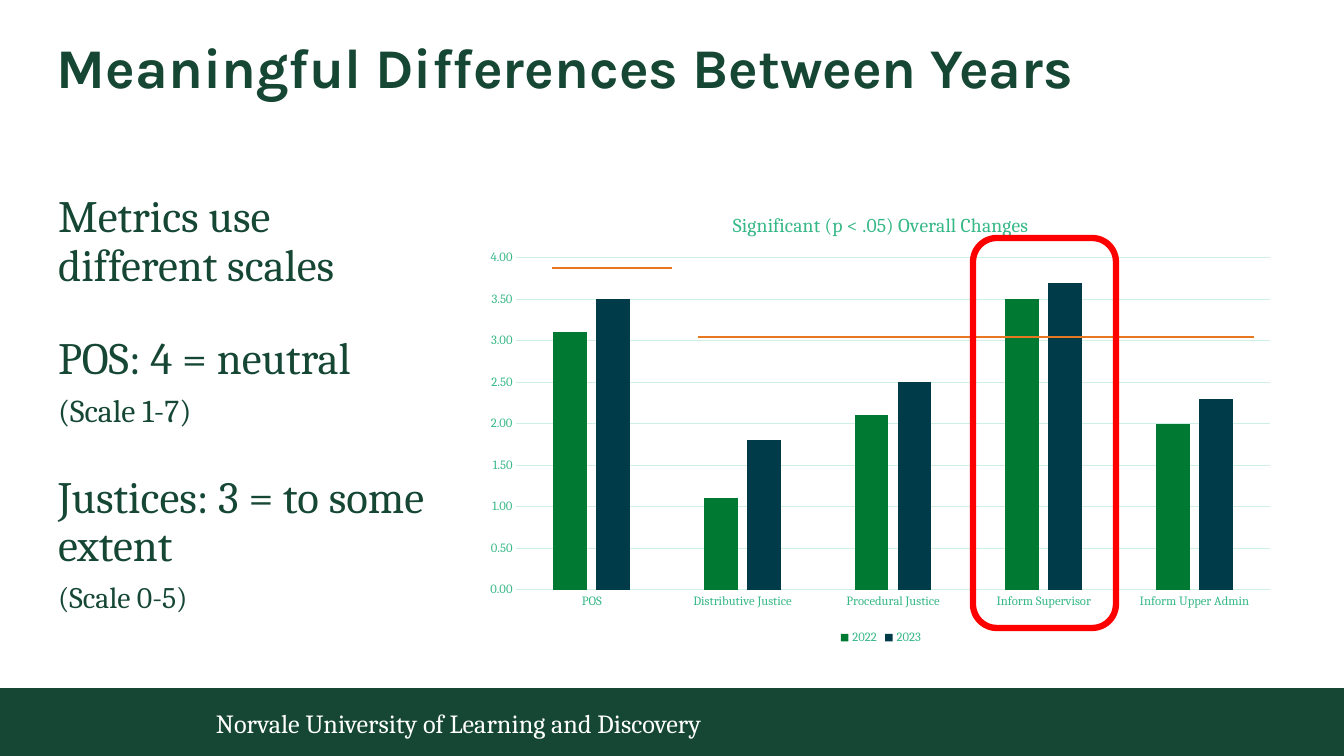
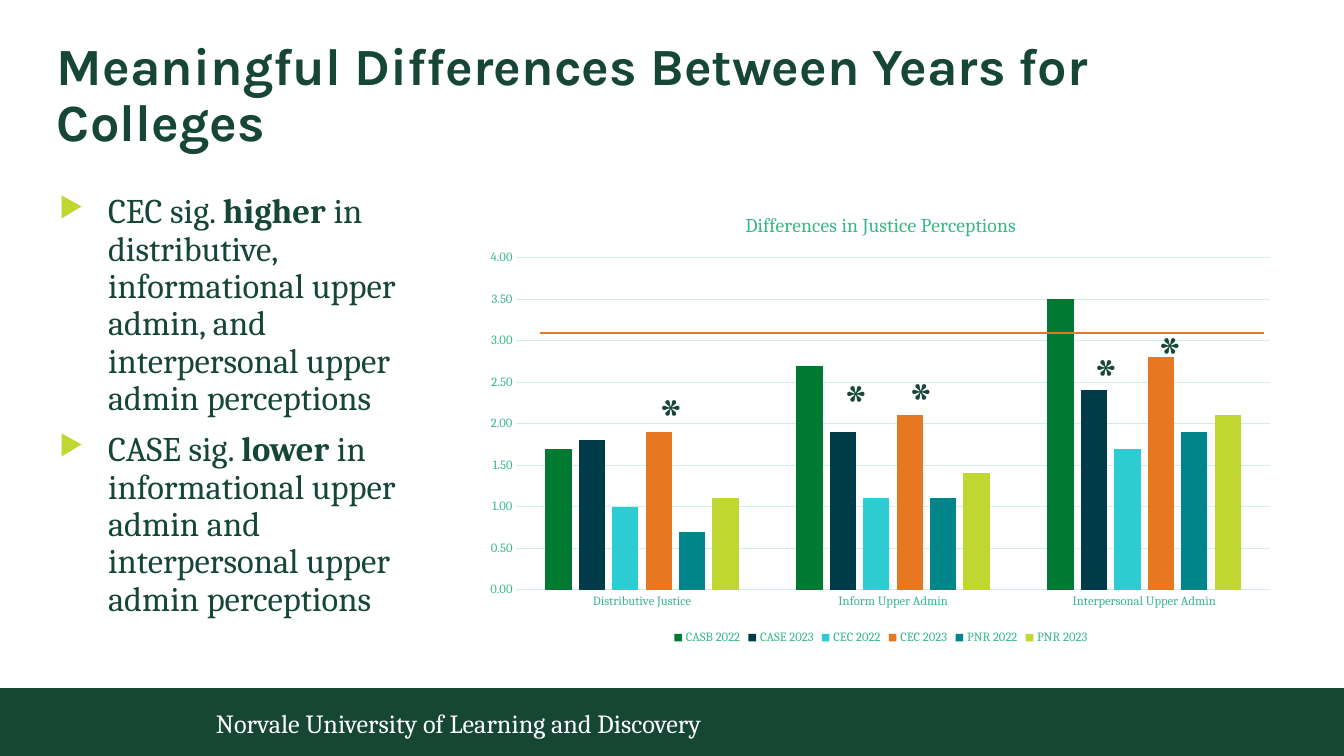
from dataclasses import dataclass

from lxml.etree import SubElement
from pptx import Presentation
from pptx.chart.data import CategoryChartData
from pptx.dml.color import RGBColor
from pptx.enum.chart import XL_CHART_TYPE as CT, XL_LEGEND_POSITION as LP, XL_TICK_MARK as TM
from pptx.enum.shapes import MSO_CONNECTOR as MC, MSO_SHAPE as MS
from pptx.enum.text import MSO_ANCHOR as MA, MSO_AUTO_SIZE as AS, PP_ALIGN as PA
from pptx.oxml.ns import qn
from pptx.util import Emu, Pt

SCALE = 914400 / 100.8
FOOTER = "Norvale University of Learning and Discovery"


@dataclass(frozen=True)
class Theme:
    """Colours, fonts and type sizes of the deck."""
    dark: str = "154734"
    white: str = "FFFFFF"
    mint: str = "36B887"
    grid: str = "CFF1E4"
    orange: str = "E87722"
    red: str = "FF0000"
    lime: str = "BFD730"
    series: tuple = ("007A33", "003B49", "2DCCD3", "E87722", "00858A", "BFD730")
    head: str = "Karla"
    body: str = "Cambria"
    title: float = 40
    long_title: float = 37.3
    lead: float = 32
    note: float = 22.7
    small_note: float = 21.3
    bullet: float = 24.7
    star: float = 42.7
    footer: float = 18.7
    chart_title: float = 14
    chart: float = 10
    axis: float = 9


T = Theme()


def px(*lengths):
    """Turn px into EMU."""
    return [Emu(round(n * SCALE)) for n in lengths]


def rgb(color):
    """Turn a hex string into a colour."""
    return RGBColor.from_string(color)


def style(font, size, color, name=T.body, bold=None):
    """Set the look of a font."""
    font.size, font.name, font.bold = Pt(size), name, bold
    font.color.rgb = rgb(color)


def write(tf, text, size=T.lead, color=T.dark, font=T.body, bold=False,
          align=None, spacing=None, before=0, after=0, bullet=None):
    """Add a paragraph, with the parts between ** in bold."""
    p = tf.paragraphs[0]
    if p.runs:
        p = tf.add_paragraph()
    p.alignment, p.line_spacing = align, spacing
    p.space_before, p.space_after = Pt(before), Pt(after)
    for i, part in enumerate(text.split("**")):
        r = p.add_run()
        r.text = part
        style(r.font, size, color, font, bold or i % 2 == 1)
    if bullet:
        pPr = p._p.get_or_add_pPr()
        indent, hang = px(50, -49)
        pPr.set("marL", str(indent))
        pPr.set("indent", str(hang))
        SubElement(SubElement(pPr, qn("a:buClr")), qn("a:srgbClr"), val=T.lime)
        SubElement(pPr, qn("a:buSzPct"), val="80000")
        SubElement(pPr, qn("a:buChar"), char=bullet)


class Deck:
    """Hold the presentation and the current slide."""

    def __init__(self):
        """Start an empty wide presentation."""
        self.prs = Presentation()
        self.prs.slide_width, self.prs.slide_height = px(1344, 756)

    def slide(self, title, size=T.title):
        """Add a slide with its band, footer and title."""
        self.s = self.prs.slides.add_slide(self.prs.slide_layouts[6])
        self.shape(MS.RECTANGLE, 0, 688, 1344, 68, fill=T.dark)
        tf = self.box(206, 697, 854, 53)
        tf.vertical_anchor = MA.MIDDLE
        write(tf, FOOTER, size=T.footer, color=T.white)
        tf = self.box(57, 40, 1229, 58, inset=False)
        write(tf, title, size=size, font=T.head, bold=True, spacing=0.9)

    def box(self, x, y, w, h, inset=True):
        """Add a wrapping text box and return its frame."""
        tf = self.s.shapes.add_textbox(*px(x, y, w, h)).text_frame
        tf.word_wrap = True
        if not inset:
            tf.margin_left = tf.margin_right = tf.margin_top = tf.margin_bottom = 0
        return tf

    def body(self):
        """Add the left text column."""
        return self.box(58, 194, 378, 455, inset=False)

    def star(self, x, y):
        """Mark a significant bar."""
        tf = self.box(x, y, 27, 82)
        tf.auto_size = AS.SHAPE_TO_FIT_TEXT
        write(tf, "*", size=T.star, align=PA.CENTER)

    def shape(self, kind, x, y, w, h, fill=None, line=None, width=4.5):
        """Add a preset shape."""
        sp = self.s.shapes.add_shape(kind, *px(x, y, w, h))
        sp.shadow.inherit = False
        if fill:
            sp.fill.solid()
            sp.fill.fore_color.rgb = rgb(fill)
        else:
            sp.fill.background()
        if line:
            sp.line.color.rgb, sp.line.width = rgb(line), Pt(width)
        else:
            sp.line.fill.background()

    def neutral_line(self, x1, x2, y):
        """Draw the neutral level of a scale."""
        ln = self.s.shapes.add_connector(MC.STRAIGHT, *px(x1, y, x2, y))
        ln.line.color.rgb, ln.line.width = rgb(T.orange), Pt(1.5)
        SubElement(ln._element.spPr, qn("a:effectLst"))

    def chart(self, title, cats, series):
        """Add the column chart."""
        data = CategoryChartData(number_format="0.0")
        data.categories = cats
        for name, vals in series.items():
            data.add_series(name, vals)
        ch = self.s.shapes.add_chart(CT.COLUMN_CLUSTERED, *px(476, 194, 810, 455), data).chart
        style(ch.font, T.chart, T.dark)
        write(ch.chart_title.text_frame, title, size=T.chart_title, color=T.mint)
        ch.has_legend = True
        ch.legend.position, ch.legend.include_in_layout = LP.BOTTOM, False
        style(ch.legend.font, T.axis, T.mint)
        plot = ch.plots[0]
        plot.gap_width, plot.overlap, plot.vary_by_categories = 219, -27, False
        for ser, color in zip(plot.series, T.series):
            ser.format.fill.solid()
            ser.format.fill.fore_color.rgb = rgb(color)
            ser.invert_if_negative = False
        self.axes(ch)
        self.plot_area(ch, x=0.05, y=0.14, w=0.93, h=0.73)

    def axes(self, ch):
        """Format both axes."""
        cat, val = ch.category_axis, ch.value_axis
        for ax in (cat, val):
            ax.major_tick_mark = ax.minor_tick_mark = TM.NONE
            style(ax.tick_labels.font, T.axis, T.mint)
        val.minimum_scale, val.maximum_scale, val.major_unit = 0, 4, 0.5
        val.tick_labels.number_format = "#,##0.00"
        val.tick_labels.number_format_is_linked = False
        val.format.line.fill.background()
        for line in (cat.format.line, val.major_gridlines.format.line):
            line.color.rgb, line.width = rgb(T.grid), Pt(0.75)

    def plot_area(self, ch, **place):
        """Fix the inner plot area as shares of the chart."""
        area = ch._chartSpace.chart.plotArea
        for old in area.findall(qn("c:layout")):
            area.remove(old)
        layout = area.makeelement(qn("c:layout"))
        area.insert(0, layout)
        manual = SubElement(layout, qn("c:manualLayout"))
        SubElement(manual, qn("c:layoutTarget"), val="inner")
        for key in "xy":
            SubElement(manual, qn(f"c:{key}Mode"), val="edge")
        for key, share in place.items():
            SubElement(manual, qn(f"c:{key}"), val=str(share))


def years(d):
    """Build the slide on overall changes."""
    d.slide("Meaningful Differences Between Years")
    tf = d.body()
    for text, size, before in (
            ("Metrics use different scales", T.lead, 24),
            ("POS: 4 = neutral", T.lead, 24),
            ("(Scale 1-7)", T.note, 0),
            ("Justices: 3 = to some extent", T.lead, 24),
            ("(Scale 0-5)", T.small_note, 0)):
        write(tf, text, size=size, spacing=0.9, before=before, after=8)
    d.chart("Significant (p < .05) Overall Changes",
            ("POS", "Distributive Justice", "Procedural Justice",
             "Inform Supervisor", "Inform Upper Admin"),
            {"2022": (3.1, 1.1, 2.1, 3.5, 2), "2023": (3.5, 1.8, 2.5, 3.7, 2.3)})
    d.neutral_line(698, 1254, 337)
    d.neutral_line(552, 672, 268)
    d.shape(MS.ROUNDED_RECTANGLE, 973, 238, 143, 390, line=T.red)


def colleges(d):
    """Build the slide on colleges."""
    d.slide("Meaningful Differences Between Years for Colleges", T.long_title)
    tf = d.body()
    for text in (
            "CEC sig. **higher** in distributive, informational upper admin, "
            "and interpersonal upper admin perceptions",
            "CASE sig. **lower** in informational upper admin and "
            "interpersonal upper admin perceptions"):
        write(tf, text, size=T.bullet, spacing=0.9, before=5, after=5, bullet="▶")
    d.chart("Differences in Justice Perceptions",
            ("Distributive Justice", "Inform Upper Admin", "Interpersonal Upper Admin"),
            {"CASB 2022": (1.7, 2.7, 3.5), "CASE 2023": (1.8, 1.9, 2.4),
             "CEC 2022": (1, 1.1, 1.7), "CEC 2023": (1.9, 2.1, 2.8),
             "PNR 2022": (0.7, 1.1, 1.9), "PNR 2023": (1.1, 1.4, 2.1)})
    d.neutral_line(540, 1264, 333)
    for x, y in ((649, 375), (834, 361), (899, 359), (1084, 335), (1148, 313)):
        d.star(x, y)


def main():
    """Build and save the deck."""
    d = Deck()
    years(d)
    colleges(d)
    d.prs.save("out.pptx")


if __name__ == "__main__":
    main()
